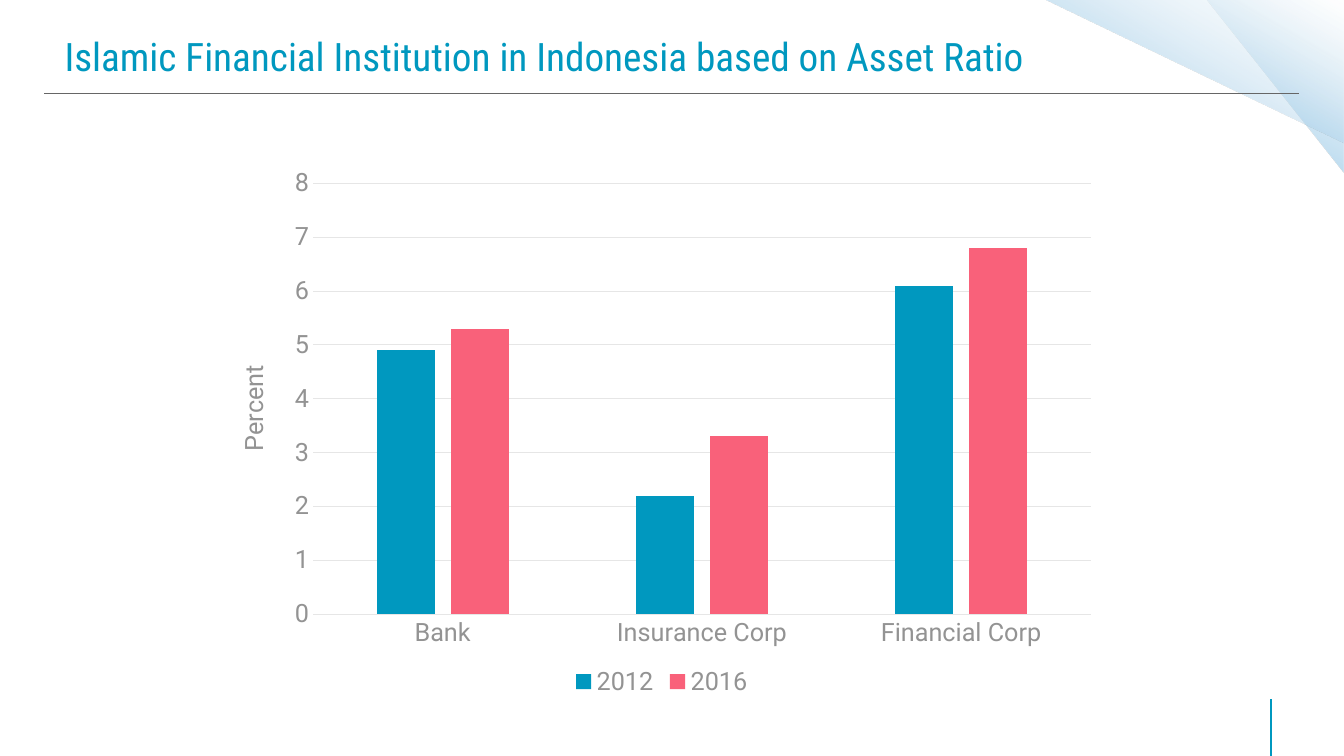
from dataclasses import dataclass

import pptx
import pptx.chart.data
import pptx.dml.color
import pptx.enum.chart
import pptx.enum.shapes
import pptx.enum.text
import pptx.oxml
import pptx.oxml.ns
import pptx.util
from lxml import etree
from pptx.util import Pt


@dataclass(frozen=True)
class Theme:
    heading_font: str = "Roboto Condensed"
    body_font: str = "Roboto"
    heading_size: int = 28
    chart_size: int = 18
    accent: str = "0098BF"
    contrast: str = "F9617A"
    rule: str = "666666"
    label: str = "939393"
    grid: str = "E6E6E6"
    corner_stops: tuple = ((0, "8FC8E8", 100), (50, "A4CEE9", 44), (100, "DEEDF6", 0))


@dataclass(frozen=True)
class Corner:
    left: float
    top: float
    width: float
    height: float


@dataclass(frozen=True)
class Rule:
    start: tuple[float, float]
    end: tuple[float, float]
    color: str
    weight: float


@dataclass(frozen=True)
class Series:
    name: str
    values: tuple[float, ...]
    color: str


THEME = Theme()
CORNERS = (Corner(861.84, 0, 97.92, 123.12), Corner(745.92, 0, 215.28, 102.24))
RULES = (
    Rule((31.68, 66.96), (928.08, 66.96), THEME.rule, 0.75),
    Rule((907.92, 540), (907.92, 498.96), THEME.accent, 1),
)
CATEGORIES = ("Bank", "Insurance Corp", "Financial Corp")
SERIES = (
    Series("2012", (4.9, 2.2, 6.1), THEME.accent),
    Series("2016", (5.3, 3.3, 6.8), THEME.contrast),
)
PLOT_AREA = {"x": 0.11, "y": 0.05, "w": 0.87, "h": 0.79}


def rgb(color: str) -> pptx.dml.color.RGBColor:
    return pptx.dml.color.RGBColor.from_string(color)


def style_font(font, name: str, size: float, color: str) -> None:
    font.name = name
    font.size = Pt(size)
    font.bold = False
    font.color.rgb = rgb(color)


def style_line(line, color: str, weight: float) -> None:
    line.color.rgb = rgb(color)
    line.width = Pt(weight)


def draw_corner(page, corner: Corner) -> None:
    triangle = page.shapes.add_shape(
        pptx.enum.shapes.MSO_SHAPE.RIGHT_TRIANGLE,
        Pt(corner.left), Pt(corner.top), Pt(corner.width), Pt(corner.height),
    )
    triangle.rotation = 180
    triangle.shadow.inherit = False
    triangle.line.fill.background()
    stops = "".join(
        f'<a:gs pos="{position * 1000}"><a:srgbClr val="{color}">'
        f'<a:alpha val="{opacity * 1000}"/></a:srgbClr></a:gs>'
        for position, color, opacity in THEME.corner_stops
    )
    gradient = pptx.oxml.parse_xml(
        f'<a:gradFill {pptx.oxml.ns.nsdecls("a")} rotWithShape="1">'
        f'<a:gsLst>{stops}</a:gsLst><a:lin ang="7200000" scaled="0"/></a:gradFill>'
    )
    geometry = triangle.element.spPr.find(pptx.oxml.ns.qn("a:prstGeom"))
    geometry.addnext(gradient)


def draw_rule(page, rule: Rule) -> None:
    connector = page.shapes.add_connector(
        pptx.enum.shapes.MSO_CONNECTOR.STRAIGHT,
        *(Pt(length) for length in rule.start + rule.end),
    )
    style_line(connector.line, rule.color, rule.weight)
    etree.SubElement(connector.element.spPr, pptx.oxml.ns.qn("a:effectLst"))


def draw_title(page, text: str) -> None:
    box = page.shapes.add_textbox(Pt(33.12), Pt(10.08), Pt(879.12), Pt(59.04))
    frame = box.text_frame
    frame.word_wrap = True
    frame.vertical_anchor = pptx.enum.text.MSO_ANCHOR.MIDDLE
    frame.margin_left = frame.margin_right = Pt(13)
    frame.margin_top = frame.margin_bottom = Pt(6.5)
    frame.text = text
    span = frame.paragraphs[0].runs[0]
    style_font(span.font, THEME.heading_font, THEME.heading_size, THEME.accent)


def place_plot(chart) -> None:
    edges = "".join(f'<c:{edge}Mode val="edge"/>' for edge in "xy")
    lengths = "".join(f'<c:{key} val="{value}"/>' for key, value in PLOT_AREA.items())
    layout = pptx.oxml.parse_xml(
        f'<c:layout {pptx.oxml.ns.nsdecls("c")}><c:manualLayout>'
        f'<c:layoutTarget val="inner"/>{edges}{lengths}</c:manualLayout></c:layout>'
    )
    plot_area = chart.element.chart.plotArea
    for former in plot_area.findall(pptx.oxml.ns.qn("c:layout")):
        plot_area.remove(former)
    plot_area.insert(0, layout)


def draw_chart(page) -> None:
    table = pptx.chart.data.CategoryChartData()
    table.categories = CATEGORIES
    for series in SERIES:
        table.add_series(series.name, series.values)
    chart = page.shapes.add_chart(
        pptx.enum.chart.XL_CHART_TYPE.COLUMN_CLUSTERED,
        Pt(153.36), Pt(111.6), Pt(638.64), Pt(389.52), table,
    ).chart
    chart.has_title = False
    chart.has_legend = True
    chart.legend.position = pptx.enum.chart.XL_LEGEND_POSITION.BOTTOM
    chart.legend.include_in_layout = False

    plot = chart.plots[0]
    plot.vary_by_categories = False
    plot.gap_width = 219
    plot.overlap = -27
    for bars, series in zip(plot.series, SERIES):
        bars.format.fill.solid()
        bars.format.fill.fore_color.rgb = rgb(series.color)

    values = chart.value_axis
    values.minimum_scale, values.maximum_scale, values.major_unit = 0, 8, 1
    values.format.line.fill.background()
    values.has_major_gridlines = True
    style_line(values.major_gridlines.format.line, THEME.grid, 0.75)
    style_line(chart.category_axis.format.line, THEME.grid, 0.75)
    for axis in (values, chart.category_axis):
        axis.major_tick_mark = pptx.enum.chart.XL_TICK_MARK.NONE
        axis.minor_tick_mark = pptx.enum.chart.XL_TICK_MARK.NONE

    para = values.axis_title.text_frame.paragraphs[0]
    para.text = "Percent"
    fonts = (
        chart.font, chart.legend.font, values.tick_labels.font,
        chart.category_axis.tick_labels.font, para.runs[0].font,
    )
    for font in fonts:
        style_font(font, THEME.body_font, THEME.chart_size, THEME.label)
    place_plot(chart)


def main() -> None:
    deck = pptx.Presentation()
    deck.slide_width, deck.slide_height = Pt(960), Pt(540)
    page = deck.slides.add_slide(deck.slide_layouts[6])
    for corner in CORNERS:
        draw_corner(page, corner)
    for rule in RULES:
        draw_rule(page, rule)
    draw_title(page, "Islamic Financial Institution in Indonesia based on Asset Ratio")
    draw_chart(page)
    deck.save("out.pptx")


if __name__ == "__main__":
    main()
